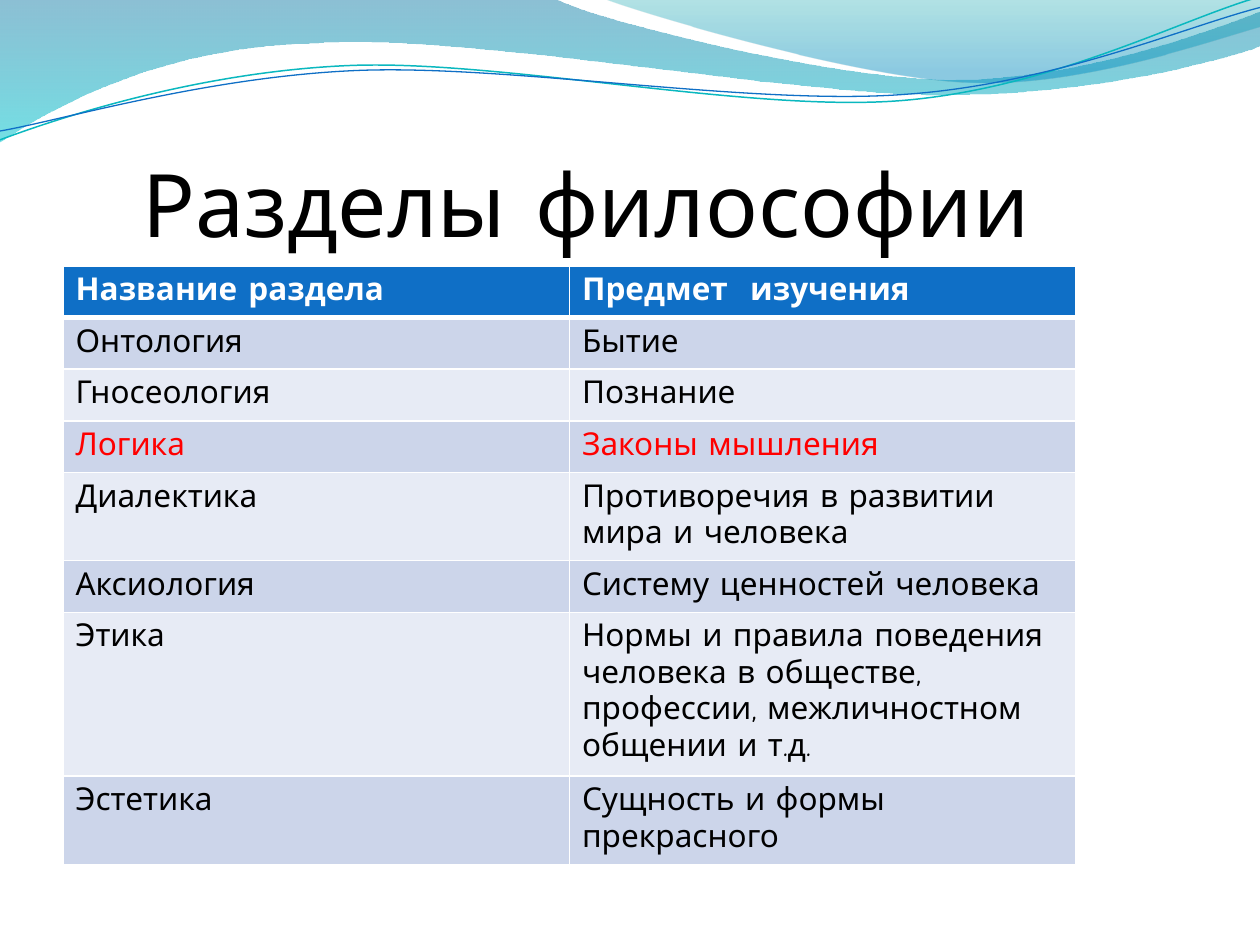
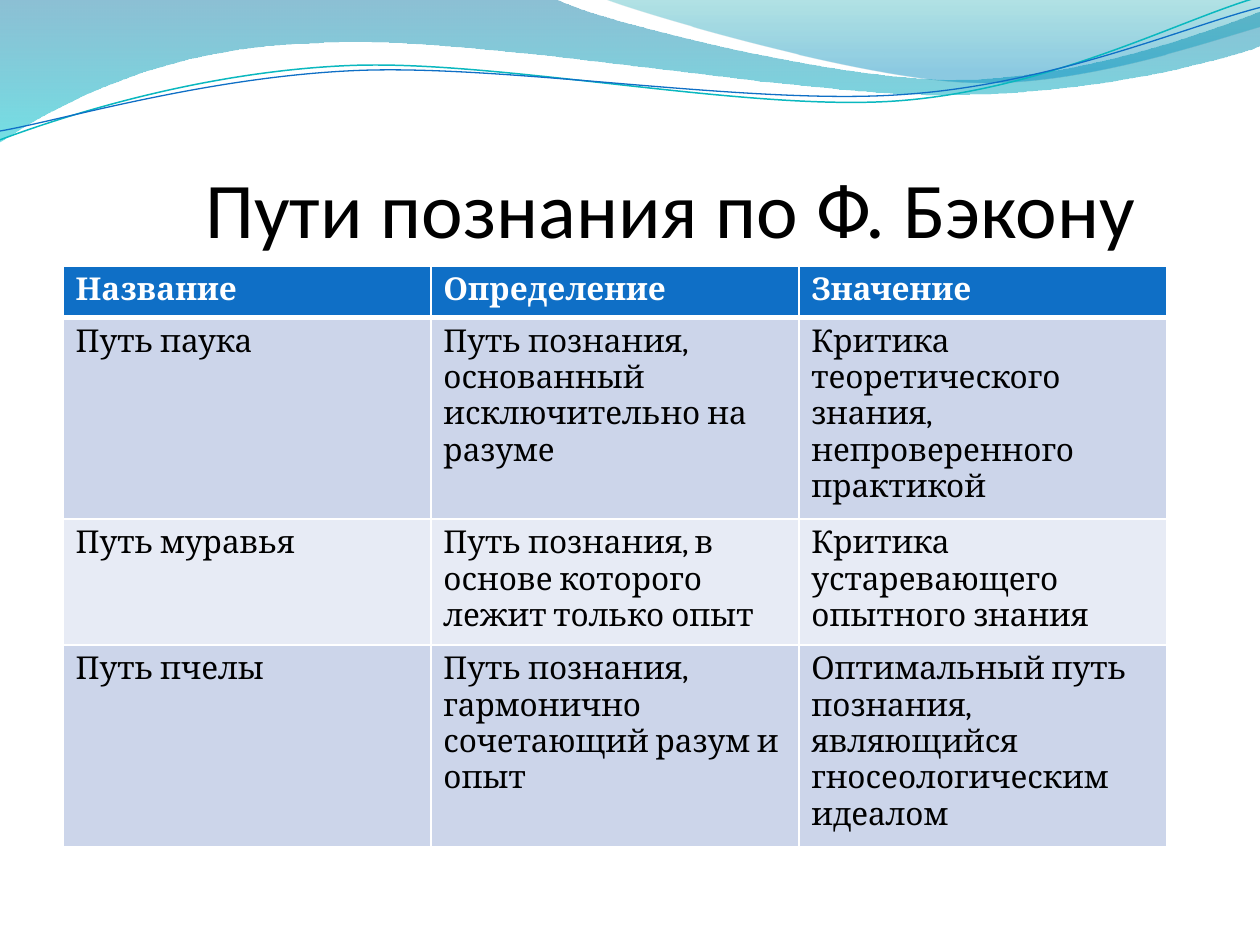
"""Two slides on philosophy: a wave header, a title and a table on each."""
from dataclasses import dataclass
from math import cos, radians, sin

from lxml import etree
from pptx import Presentation
from pptx.dml.color import RGBColor
from pptx.enum import text
from pptx.oxml import parse_xml
from pptx.oxml.ns import nsdecls, qn
from pptx.util import Inches, Pt


@dataclass(frozen=True)
class Theme:
    """Colours, fonts and type sizes of the deck."""
    ink: str = "000000"
    white: str = "FFFFFF"
    accent: str = "FF0000"
    header: str = "0F6FC6"
    bands: tuple = ("CCD5EA", "E7EBF5")
    teal_line: str = "0AB8BF"
    wide_wave: tuple = ((0, "0074A1", 45), (1, "00C6CF", 55))
    right_wave: tuple = ((0, "00A1A9", 30), (0.8, "008BBF", 45))
    sans: str = "Calibri"
    serif: str = "Cambria"
    comic: str = "Comic Neue"
    title_large: int = 50
    title_small: int = 45
    body: int = 18


T = Theme()
LINE_TILT = -2.7

WIDE_WAVE = [
    (0, 0), (4.4, -0.01),
    (4.76, 0.17, 6.64, 0.63, 7.58, 0.63), (8.53, 0.63, 9.58, 0.26, 10, 0.09),
    (10.01, 0.36),
    (9.83, 0.44, 8.7, 0.76, 7.46, 0.75), (6.22, 0.75, 3.82, 0.28, 2.57, 0.34),
    (1.29, 0.36, 0.46, 0.83, -0.01, 1.13), (0, 0),
]
RIGHT_WAVE = [
    (4.79, -0.01),
    (5.09, 0.11, 6.82, 0.62, 7.69, 0.65), (8.56, 0.69, 9.61, 0.32, 10, 0.21),
    (10, 0), (4.79, -0.01),
]
TEAL_LINE = [
    (0, 1.11),
    (0.48, 0.93, 1.58, 0.57, 2.77, 0.52), (3.95, 0.47, 5.93, 0.89, 7.13, 0.8),
    (8.33, 0.71, 9.38, 0.15, 9.98, -0.02),
]
BLUE_LINE = [
    (0, 1.04),
    (0.47, 0.96, 1.64, 0.61, 2.83, 0.56), (4.03, 0.51, 5.97, 0.84, 7.17, 0.75),
    (8.36, 0.67, 9.41, 0.21, 10, 0.06),
]

SECTIONS = [
    ("Название раздела", "Предмет  изучения"),
    ("Онтология", "Бытие"),
    ("Гносеология", "Познание"),
    ("Логика", "Законы мышления"),
    ("Диалектика", "Противоречия в развитии мира и человека"),
    ("Аксиология", "Систему ценностей человека"),
    ("Этика", "Нормы и правила поведения человека в обществе, "
              "профессии, межличностном общении и т.д."),
    ("Эстетика", "Сущность и формы прекрасного"),
]
SECTION_LINES = (1, 1, 1, 1, 2, 1, 4, 2)
WAYS_OF_KNOWING = [
    ("Название", "Определение", "Значение"),
    ("Путь паука", "Путь познания, основанный исключительно на разуме",
     "Критика теоретического знания, непроверенного практикой"),
    ("Путь муравья", "Путь познания, в основе которого лежит только опыт",
     "Критика  устаревающего опытного знания"),
    ("Путь пчелы", "Путь познания, гармонично сочетающий разум и опыт",
     "Оптимальный путь познания, являющийся гносеологическим идеалом"),
]
WAY_LINES = (1, 5, 3, 5)


def rgb(code):
    """Turn a hex code into a colour."""
    return RGBColor.from_string(code)


def turn(segments, center, degrees):
    """Turn every point of the segments clockwise about the center."""
    cx, cy = center
    c, n = cos(radians(degrees)), sin(radians(degrees))
    turned = []
    for seg in segments:
        pairs = zip(seg[::2], seg[1::2])
        turned.append([v for x, y in pairs
                       for v in (cx + (x - cx) * c - (y - cy) * n,
                                 cy + (x - cx) * n + (y - cy) * c)])
    return turned


def add_outline(s, segments, close):
    """Draw a freeform of straight (2 numbers) and cubic (6 numbers) segments."""
    points = [(Inches(x), Inches(y)) for seg in segments
              for x, y in zip(seg[::2], seg[1::2])]
    builder = s.shapes.build_freeform(*points[0])
    builder.add_line_segments(points[1:], close=close)
    sp = builder.convert_to_shape()
    sp.shadow.inherit = False
    steps = iter(sp._element.spPr.findall(".//" + qn("a:lnTo")))
    for seg in segments[1:]:
        step = next(steps)
        if len(seg) == 6:
            curve = etree.Element(qn("a:cubicBezTo"))
            step.addprevious(curve)
            for part in (step, next(steps), next(steps)):
                curve.append(part[0])
                part.getparent().remove(part)
    return sp


def add_wave(s, segments, stops):
    """Draw a closed wave with a translucent top-down gradient."""
    sp = add_outline(s, segments, True)
    sp.line.fill.background()
    sp.fill.gradient()
    sp.fill.gradient_angle = 270
    for stop, (position, color, _) in zip(sp.fill.gradient_stops, stops):
        stop.position = position
        stop.color.rgb = rgb(color)
    marks = sp._element.spPr.findall(".//{*}gs/{*}srgbClr")
    for mark, (_, _, opacity) in zip(marks, stops):
        mark.append(parse_xml(f'<a:alpha {nsdecls("a")} val="{opacity * 1000}"/>'))


def add_wave_line(s, segments, center, color, width):
    """Draw an open curved line as a tilted shape."""
    sp = add_outline(s, turn(segments, center, -LINE_TILT), False)
    sp.rotation = LINE_TILT
    sp.fill.background()
    sp.line.color.rgb = rgb(color)
    sp.line.width = Pt(width)


def add_header(s):
    """Draw the wave band shared by the slides."""
    add_wave(s, WIDE_WAVE, T.wide_wave)
    add_wave(s, RIGHT_WAVE, T.right_wave)
    add_wave_line(s, TEAL_LINE, (4.99, 0.58), T.teal_line, 0.85)
    add_wave_line(s, BLUE_LINE, (5, 0.59), T.header, 0.75)


def add_run(p, words, font, size, color, bold=False):
    """Add one formatted run."""
    r = p.add_run()
    r.text = words
    r.font.name = font
    r.font.size = Pt(size)
    r.font.bold = bold
    r.font.color.rgb = rgb(color)


def add_title(s, words, font, size, indent):
    """Add the slide title, indented from the left edge of its box."""
    sp = s.shapes.add_textbox(Inches(0.5), Inches(0.77), Inches(9), Inches(1.25))
    tf = sp.text_frame
    tf.word_wrap = True
    tf.vertical_anchor = text.MSO_ANCHOR.BOTTOM
    tf.margin_left = Inches(indent)
    tf.margin_right = tf.margin_bottom = 0
    add_run(tf.paragraphs[0], words, font, size, T.ink)


def set_borders(cell, top, bottom):
    """Give a cell white borders."""
    tc_pr = cell._tc.get_or_add_tcPr()
    for side, width in (("L", 1), ("R", 1), ("T", top), ("B", bottom)):
        tc_pr.append(parse_xml(
            f'<a:ln{side} {nsdecls("a")} w="{Pt(width)}"><a:solidFill>'
            f'<a:srgbClr val="{T.white}"/></a:solidFill></a:ln{side}>'))


def add_table(s, rows, line_counts, col_width, font, accent_row=None):
    """Add a table with a header row and banded body rows."""
    cols = len(rows[0])
    heights = [0.41 if n == 1 else 0.1 + 0.29 * n for n in line_counts]
    frame = s.shapes.add_table(len(rows), cols, Inches(0.5), Inches(2.11),
                               Inches(col_width * cols), Inches(sum(heights)))
    table = frame.table
    for column in table.columns:
        column.width = Inches(col_width)
    for i, row in enumerate(rows):
        table.rows[i].height = Inches(heights[i])
        is_header = i == 0
        fill = T.header if is_header else T.bands[(i - 1) % 2]
        color = T.white if is_header else T.accent if i == accent_row else T.ink
        for j, words in enumerate(row):
            cell = table.cell(i, j)
            set_borders(cell, 3 if i == 1 else 1, 3 if is_header else 1)
            cell.fill.solid()
            cell.fill.fore_color.rgb = rgb(fill)
            add_run(cell.text_frame.paragraphs[0], words, font, T.body, color, is_header)


def add_slide(prs):
    """Add a blank slide with the shared header."""
    s = prs.slides.add_slide(prs.slide_layouts[6])
    add_header(s)
    return s


def main():
    """Build and save the deck."""
    prs = Presentation()
    prs.slide_width, prs.slide_height = Inches(10), Inches(7.5)

    s = add_slide(prs)
    add_title(s, "Разделы философии", T.comic, T.title_large, 0.63)
    add_table(s, SECTIONS, SECTION_LINES, 4.02, T.comic, accent_row=3)

    s = add_slide(prs)
    add_title(s, "Пути познания по Ф. Бэкону", T.sans, T.title_small, 1.13)
    add_table(s, WAYS_OF_KNOWING, WAY_LINES, 2.92, T.serif)

    prs.save("out.pptx")


if __name__ == "__main__":
    main()
